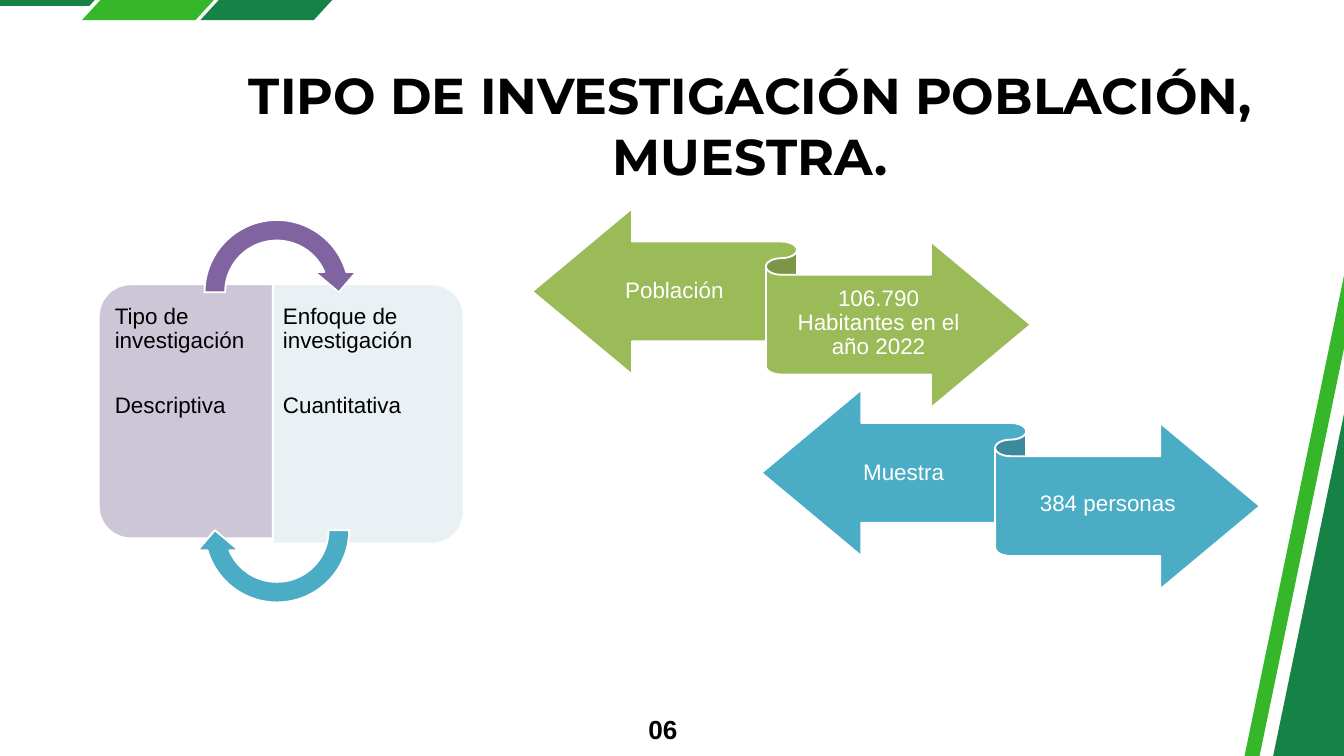
from dataclasses import dataclass

from pptx import Presentation
from pptx.dml.color import RGBColor
from pptx.enum import shapes, text
from pptx.util import Pt


@dataclass(frozen=True)
class Theme:
    ink: str = "000000"
    paper: str = "FFFFFF"
    dark_green: str = "168246"
    bright_green: str = "35B729"
    olive: str = "9BBB59"
    teal: str = "4BACC6"
    purple: str = "8064A2"
    lilac: str = "CDC6D7"
    ice: str = "E9F1F5"
    heading: str = "Montserrat"
    body: str = "Arial"
    title_size: float = 54
    label_size: float = 24
    number_size: float = 28
    outline: float = 2


THEME = Theme()
KIND = shapes.MSO_SHAPE
CENTER, RIGHT = text.PP_ALIGN.CENTER, text.PP_ALIGN.RIGHT


def apply(target, values):
    for name, value in values.items():
        setattr(target, name, value)


def place(item, box):
    apply(item, dict(zip(("left", "top", "width", "height"), map(Pt, box))))


def paint(shape, color, outline=None):
    shape.shadow.inherit = False
    shape.fill.solid()
    shape.fill.fore_color.rgb = RGBColor.from_string(color)
    if outline is None:
        shape.line.fill.background()
    else:
        shape.line.color.rgb = RGBColor.from_string(outline)
        shape.line.width = Pt(THEME.outline)


def write(item, lines, color, font, para_format=None, insets=(0, 0, 0, 0),
          anchor=text.MSO_ANCHOR.TOP, gap=0):
    frame = item.text_frame
    apply(frame, {"word_wrap": True, "auto_size": text.MSO_AUTO_SIZE.NONE,
                  "vertical_anchor": anchor})
    sides = ("margin_left", "margin_top", "margin_right", "margin_bottom")
    apply(frame, dict(zip(sides, map(Pt, insets))))
    for index, line in enumerate(lines):
        para = frame.add_paragraph() if index else frame.paragraphs[0]
        apply(para, para_format or {})
        if index:
            para.space_before = Pt(gap)
        span = para.add_run()
        span.text = line
        apply(span.font, font)
        span.font.color.rgb = RGBColor.from_string(color)


def label(page, box, lines, color, **options):
    item = page.shapes.add_textbox(*map(Pt, box))
    font = {"name": THEME.body, "size": Pt(THEME.label_size)}
    write(item, lines, color, font, **options)


def preset(page, kind, box, color, rotation=0, adjustments=()):
    shape = page.shapes.add_shape(kind, *map(Pt, box))
    shape.rotation = rotation
    for index, value in enumerate(adjustments):
        shape.adjustments[index] = value
    paint(shape, color, THEME.paper)


def slanted_bar(page, box, color, lean=0, rotation=0):
    left, top, width, height = box
    right, bottom = left + width, top + height
    corners = [(left + lean, top), (right, top), (right - lean, bottom), (left, bottom)]
    points = [(Pt(x), Pt(y)) for x, y in corners]
    builder = page.shapes.build_freeform(*points[0])
    builder.add_line_segments(points[1:], close=True)
    bar = builder.convert_to_shape()
    bar.rotation = rotation
    paint(bar, color)


def decoration(page):
    slanted_bar(page, (-189.4, -59.8, 345.6, 66.2), THEME.dark_green, lean=60.5)
    for left, color in ((87.8, THEME.bright_green), (214.6, THEME.dark_green)):
        slanted_bar(page, (left, -74.2, 209.5, 95.8), color, lean=88)
    slanted_bar(page, (997.9, 385.2, 1181.5, 335.5), THEME.dark_green, rotation=281.7)
    slanted_bar(page, (810.7, 512.6, 1181.5, 15.8), THEME.bright_green, rotation=281.7)


def heading(page, box):
    title = page.shapes.title
    place(title, box)
    font = {"name": THEME.heading, "size": Pt(THEME.title_size), "bold": True}
    write(title, ["TIPO DE INVESTIGACIÓN POBLACIÓN, MUESTRA."], THEME.ink, font,
          {"alignment": CENTER})


def page_number(page, box):
    item = page.shapes.add_textbox(*map(Pt, box))
    font = {"name": THEME.body, "size": Pt(THEME.number_size), "bold": True}
    write(item, ["06"], THEME.ink, font,
          {"alignment": RIGHT, "line_spacing": Pt(39.2)})


def ribbon(page, box, color, left_text, right_text):
    left, top, width, height = box
    preset(page, KIND.LEFT_RIGHT_RIBBON, box, color)
    for x, y, label_width, line in ((64.1, 37.4, 176.4, left_text),
                                    (267, 71.3, 208.1, right_text)):
        label(page, (left + x, top + y, label_width, 104.4), [line], THEME.paper,
              para_format={"alignment": CENTER, "line_spacing": 0.9},
              insets=(0, 6.5, 0, 7.2), anchor=text.MSO_ANCHOR.MIDDLE)


def cycle(page, box):
    left, top, width, height = box
    card_width, arrow_size = 204.5, 177.1
    cards = (
        (0, 272.2, 270, THEME.lilac, 10.1, (7.2, 12.2, 10.8, 12.2),
         ["Tipo de investigación", "Descriptiva"]),
        (186.5, 277.9, 90, THEME.ice, 186.5, (10.8, 12.2, 7.2, 12.2),
         ["Enfoque de investigación", "Cuantitativa"]),
    )
    for x, card_height, rotation, color, text_x, insets, lines in cards:
        shift = (card_height - card_width) / 2
        preset(page, KIND.ROUND_2_SAME_RECTANGLE,
               (left + x - shift, top + 80 + shift, card_height, card_width),
               color, rotation, (0.167, 0))
        label(page, (left + text_x, top + 90, 194.4, card_height - 20), lines,
              THEME.ink, para_format={"line_spacing": 0.9}, insets=insets, gap=43.5)
    arrow_left = left + 102.3
    for y, rotation, color in ((top, 0, THEME.purple),
                               (top + height - arrow_size, 180, THEME.teal)):
        preset(page, KIND.CIRCULAR_ARROW, (arrow_left, y, arrow_size, arrow_size),
               color, rotation, (0.125, 11.423, 204.577, 108, 0.125))


def main():
    deck = Presentation()
    deck.slide_width, deck.slide_height = Pt(1440), Pt(810)
    page = deck.slides.add_slide(deck.slide_layouts.get_by_name("Title Only"))
    decoration(page)
    heading(page, (257.8, 69.1, 1092.2, 131))
    page_number(page, (685.4, 758.9, 40.3, 36))
    ribbon(page, (815.8, 417.6, 534.2, 213.8), THEME.teal, "Muestra", "384 personas")
    cycle(page, (105.8, 224.6, 391, 432))
    ribbon(page, (570.2, 223.2, 534.2, 213.8), THEME.olive, "Población",
           "106.790 Habitantes en el año 2022")
    deck.save("out.pptx")


if __name__ == "__main__":
    main()
